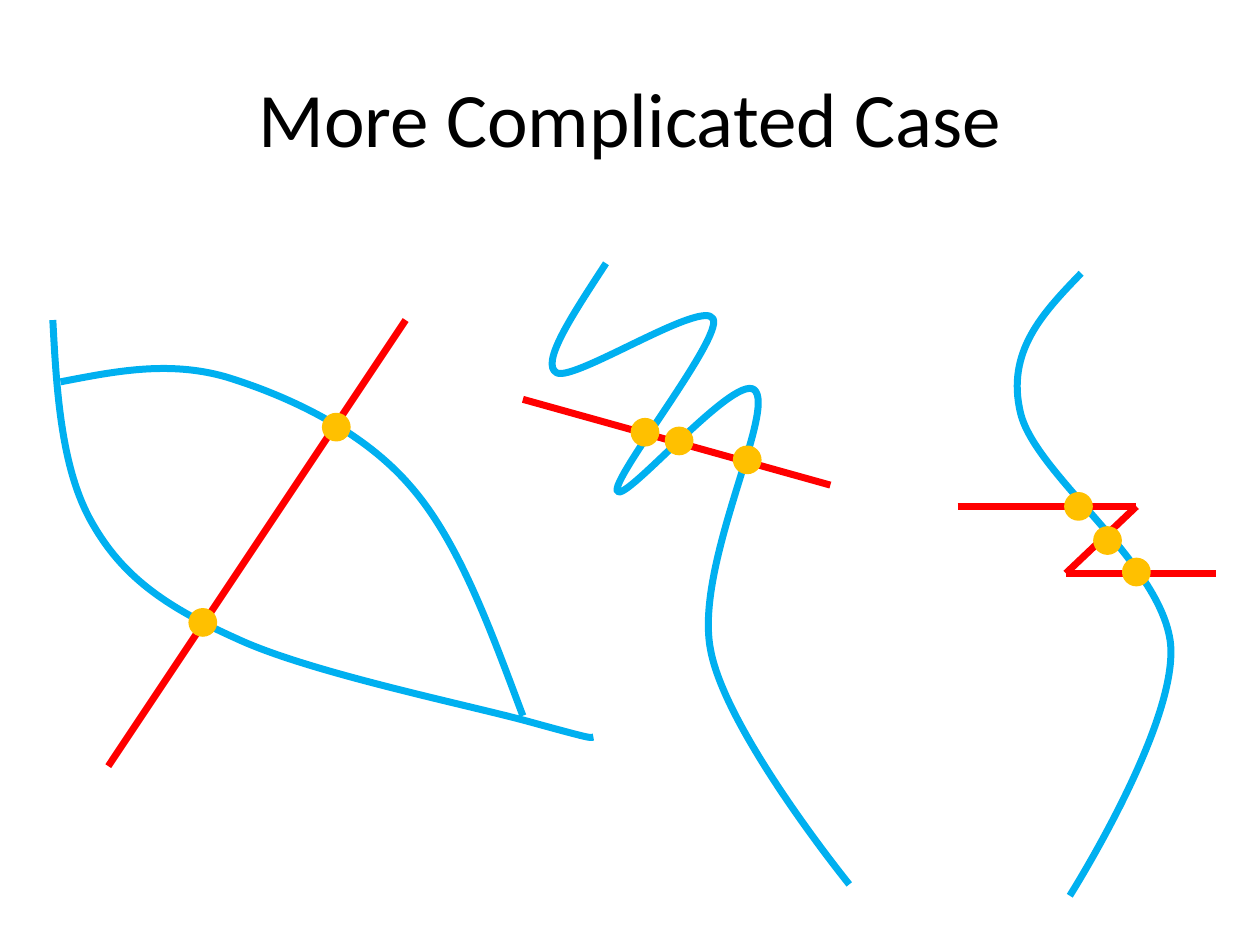
from dataclasses import dataclass
from itertools import pairwise

from lxml.etree import SubElement
from pptx import Presentation
from pptx.dml.color import RGBColor
from pptx.enum.shapes import MSO_CONNECTOR as Connector, MSO_SHAPE as Shape
from pptx.enum.text import MSO_ANCHOR as Anchor, PP_ALIGN as Align
from pptx.oxml.ns import qn
from pptx.util import Pt

BLUE, RED, AMBER, BLACK = "00B0F0", "FF0000", "FFC000", "000000"
STROKE = 4
DOT_SIZE = 14.4

Point = tuple[float, float]


@dataclass
class Curve:
    start: Point
    segments: list[tuple[Point, Point, Point]]


@dataclass
class Figure:
    curves: list[Curve]
    cut: list[Point]
    crossings: list[Point]


LENS = Figure(
    curves=[
        Curve((30.2, 182.9), [
            ((32.4, 225.4), (35.3, 268.6), (52.6, 298.8)),
            ((69.8, 329), (93.6, 346.3), (135.4, 365)),
            ((177.1, 384.5), (269.3, 403.2), (303.1, 412.6)),
            ((337, 421.9), (337.7, 421.9), (339.1, 421.2)),
        ]),
        Curve((34.6, 218.2), [
            ((64.8, 212.4), (95.8, 205.9), (128.9, 215.3)),
            ((162, 225.4), (205.9, 244.8), (234, 277.2)),
            ((262.1, 308.9), (280.1, 359.3), (298.8, 409)),
        ]),
    ],
    cut=[(231.8, 182.9), (61.9, 437.8)],
    crossings=[(115.9, 355.7), (192.2, 244.1)],
)

ZIGZAG_CURVE = Figure(
    curves=[
        Curve((346.3, 150.5), [
            ((327.6, 179.3), (308.2, 208.1), (318.2, 213.1)),
            ((328.3, 218.2), (401.8, 170.6), (407.5, 182.2)),
            ((413.3, 193), (348.5, 274.3), (352.8, 280.8)),
            ((357.1, 288), (423.4, 208.8), (432, 223.9)),
            ((441.4, 239), (396.7, 324.7), (406.1, 371.5)),
            ((414.7, 418.3), (485.3, 505.4), (485.3, 505.4)),
        ]),
    ],
    cut=[(298.8, 228.2), (474.5, 277.2)],
    crossings=[(368.6, 247), (388.1, 252), (427, 262.8)],
)

ZIGZAG_CUT = Figure(
    curves=[
        Curve((617.8, 156.2), [
            ((596.2, 178.6), (574.6, 200.9), (583.2, 236.2)),
            ((591.8, 271.4), (663.8, 321.8), (668.9, 367.9)),
            ((673.2, 414), (611.3, 511.9), (611.3, 511.9)),
        ]),
    ],
    cut=[(547.2, 289.4), (649.4, 289.4), (609.1, 327.6), (694.8, 327.6)],
    crossings=[(616.3, 289.4), (632.9, 308.9), (649.4, 326.9)],
)


def color(value: str) -> RGBColor:
    return RGBColor.from_string(value)


def set_line(shape, value: str, width: float) -> None:
    shape.line.color.rgb = color(value)
    shape.line.width = Pt(width)


def to_emu(point: Point) -> tuple[int, int]:
    return Pt(point[0]), Pt(point[1])


def draw_title(page, text: str) -> None:
    box = page.shapes.add_textbox(Pt(36), Pt(21.6), Pt(648), Pt(90))
    frame = box.text_frame
    frame.word_wrap = True
    frame.vertical_anchor = Anchor.MIDDLE
    frame.text = text
    para = frame.paragraphs[0]
    para.alignment = Align.CENTER
    span = para.runs[0]
    span.font.name = "Calibri"
    span.font.size = Pt(44)
    span.font.color.rgb = color(BLACK)


def draw_curve(page, curve: Curve) -> None:
    builder = page.shapes.build_freeform(*to_emu(curve.start))
    ends = [to_emu(segment[-1]) for segment in curve.segments]
    builder.add_line_segments(ends, close=False)
    shape = builder.convert_to_shape()
    shape.shadow.inherit = False
    shape.fill.background()
    set_line(shape, BLUE, STROKE)
    steps = shape._element.xpath(".//a:lnTo")
    for step, segment in zip(steps, curve.segments):
        step.tag = qn("a:cubicBezTo")
        for index, control in enumerate(segment[:2]):
            x, y = to_emu(control)
            handle = SubElement(step, qn("a:pt"), x=str(x - shape.left), y=str(y - shape.top))
            step.insert(index, handle)


def draw_cut(page, points: list[Point]) -> None:
    for start, end in pairwise(points):
        line = page.shapes.add_connector(Connector.STRAIGHT, *to_emu(start), *to_emu(end))
        set_line(line, RED, STROKE)
        SubElement(line._element.spPr, qn("a:effectLst"))


def draw_crossing(page, center: Point) -> None:
    left, top = (value - DOT_SIZE / 2 for value in center)
    dot = page.shapes.add_shape(Shape.OVAL, Pt(left), Pt(top), Pt(DOT_SIZE), Pt(DOT_SIZE))
    dot.shadow.inherit = False
    dot.fill.solid()
    dot.fill.fore_color.rgb = color(AMBER)
    set_line(dot, AMBER, 2)


def draw_figure(page, figure: Figure) -> None:
    for curve in figure.curves:
        draw_curve(page, curve)
    draw_cut(page, figure.cut)
    for center in figure.crossings:
        draw_crossing(page, center)


def main() -> None:
    deck = Presentation()
    deck.slide_width, deck.slide_height = Pt(720), Pt(540)
    page = deck.slides.add_slide(deck.slide_layouts[6])
    draw_title(page, "More Complicated Case")
    for figure in (LENS, ZIGZAG_CURVE, ZIGZAG_CUT):
        draw_figure(page, figure)
    deck.save("out.pptx")


if __name__ == "__main__":
    main()
